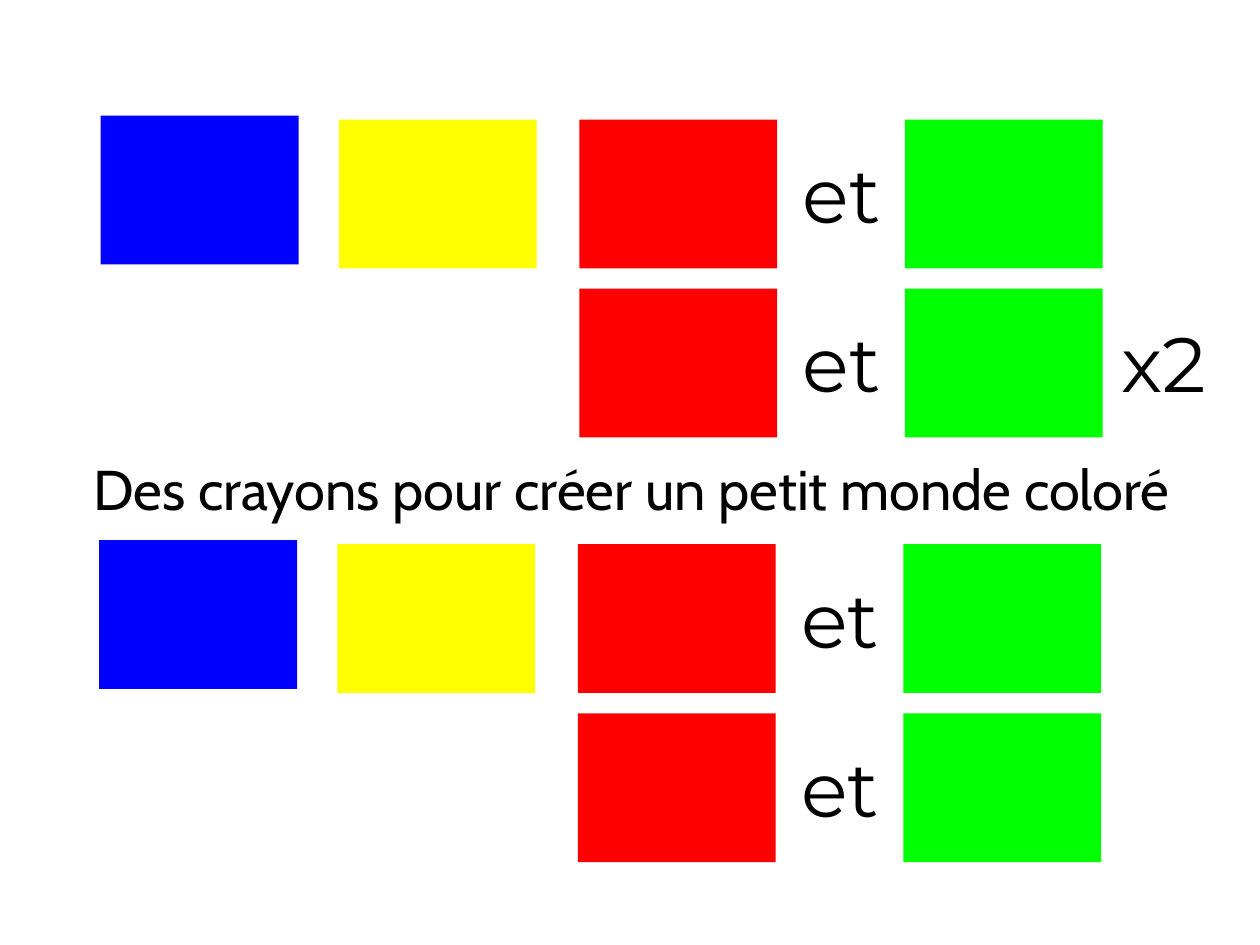
import pptx
import pptx.dml.color
import pptx.enum.shapes
import pptx.enum.text
import pptx.util

Cm = pptx.util.Cm
RGBColor = pptx.dml.color.RGBColor
PP_ALIGN = pptx.enum.text.PP_ALIGN

BLUE = RGBColor(0x00, 0x00, 0xFF)
YELLOW = RGBColor(0xFF, 0xFF, 0x00)
RED = RGBColor(0xFF, 0x00, 0x00)
GREEN = RGBColor(0x00, 0xFF, 0x00)
BLACK = RGBColor(0x00, 0x00, 0x00)

CARD_WIDTH, CARD_HEIGHT = 3.99, 3.0
ROW_STEP = 3.41
BLUE_LEFT, YELLOW_LEFT, RED_LEFT, GREEN_LEFT = 2.03, 6.83, 11.68, 18.24
BLUE_RISE = 0.08
WORD_LEFT, WORD_DROP = 15.06, 0.42
WORD_WIDTH, WORD_HEIGHT = 3.81, 2.13


def add_card(slide, left, top, color):
    shape = slide.shapes.add_shape(
        pptx.enum.shapes.MSO_SHAPE.RECTANGLE,
        Cm(left), Cm(top), Cm(CARD_WIDTH), Cm(CARD_HEIGHT))
    shape.shadow.inherit = False
    shape.fill.solid()
    shape.fill.fore_color.rgb = color
    shape.line.fill.background()


def add_text(slide, text, left, top, width, height, font_name, size, alignment):
    shape = slide.shapes.add_textbox(Cm(left), Cm(top), Cm(width), Cm(height))
    frame = shape.text_frame
    frame.word_wrap = True
    frame.auto_size = pptx.enum.text.MSO_AUTO_SIZE.SHAPE_TO_FIT_TEXT
    paragraph = frame.paragraphs[0]
    paragraph.text = text
    paragraph.alignment = alignment
    paragraph.font.name = font_name
    paragraph.font.size = pptx.util.Pt(size)
    paragraph.font.color.rgb = BLACK


def add_word(slide, text, left, row_top):
    add_text(slide, text, left, row_top + WORD_DROP, WORD_WIDTH, WORD_HEIGHT,
             "Montserrat", 44, PP_ALIGN.CENTER)


def add_red_green_pair(slide, shift, top):
    add_card(slide, RED_LEFT + shift, top, RED)
    add_card(slide, GREEN_LEFT + shift, top, GREEN)
    add_word(slide, "et", WORD_LEFT + shift, top)


def add_color_group(slide, shift, top):
    add_red_green_pair(slide, shift, top)
    add_card(slide, YELLOW_LEFT + shift, top, YELLOW)
    add_card(slide, BLUE_LEFT + shift, top - BLUE_RISE, BLUE)
    add_red_green_pair(slide, shift, top + ROW_STEP)


def main():
    presentation = pptx.Presentation()
    presentation.slide_width = Cm(25.4)
    presentation.slide_height = Cm(19.05)
    slide = presentation.slides.add_slide(presentation.slide_layouts[6])

    first_top, second_top = 2.41, 10.97
    add_color_group(slide, 0, first_top)
    add_word(slide, "x2", 21.56, first_top + ROW_STEP)
    add_text(slide, "Des crayons pour créer un petit monde coloré",
             1.63, 9.04, 22.4, 1.63, "Cabin", 32, PP_ALIGN.LEFT)
    add_color_group(slide, -0.03, second_top)

    presentation.save("out.pptx")


if __name__ == "__main__":
    main()
